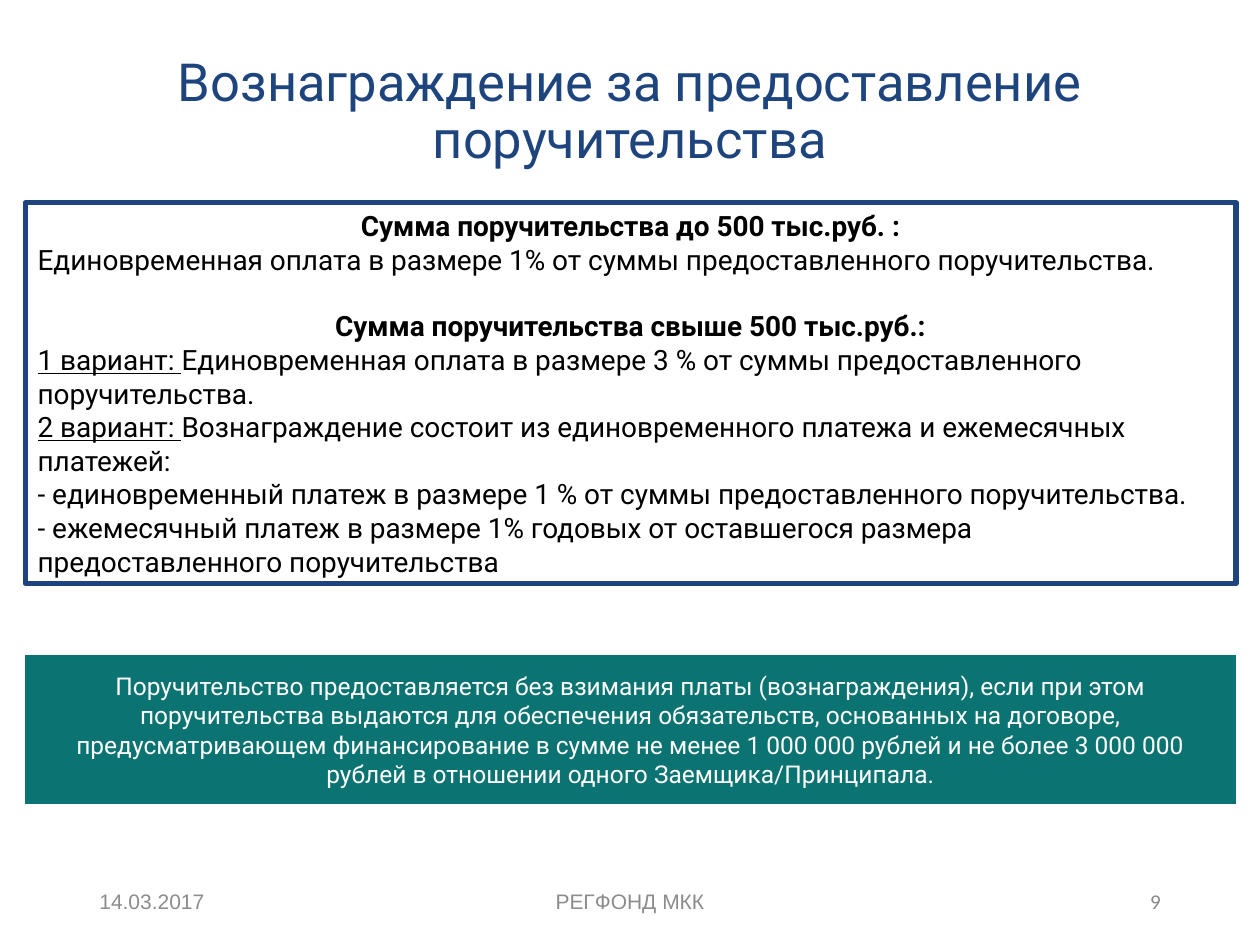
"""Build the slide on the fee for providing a guarantee."""
from dataclasses import dataclass
from typing import Optional

from pptx import Presentation
from pptx.dml.color import RGBColor
from pptx.enum.shapes import MSO_SHAPE
from pptx.enum.text import MSO_ANCHOR, PP_ALIGN
from pptx.util import Inches, Pt

COLORS = {
    "navy": "1E447E",
    "teal": "0B7371",
    "white": "FFFFFF",
    "black": "000000",
    "gray": "8C8C8C",
    "page": "898989",
}
LEFT, CENTER, RIGHT = PP_ALIGN.LEFT, PP_ALIGN.CENTER, PP_ALIGN.RIGHT


@dataclass
class Para:
    text: str
    lead: str = ""
    align: PP_ALIGN = LEFT
    bold: bool = False
    before: float = 0
    spacing: float = 1.0


@dataclass
class Block:
    left: float
    top: float
    width: float
    height: float
    paras: list[Para]
    size: float
    color: str
    font: str = "Roboto"
    fill: Optional[str] = None
    line: Optional[str] = None


def rgb(name: str) -> RGBColor:
    """Return the named colour."""
    return RGBColor.from_string(COLORS[name])


def add_para(p, para: Para, block: Block) -> None:
    """Write one paragraph, with its underlined lead if it has one."""
    p.alignment = para.align
    p.line_spacing = para.spacing
    p.space_before = Pt(para.before)
    p.font.name = block.font
    p.font.size = Pt(block.size)
    p.font.bold = para.bold
    p.font.color.rgb = rgb(block.color)
    if para.lead:
        r = p.add_run()
        r.text = para.lead
        r.font.underline = True
    p.add_run().text = para.text


def add_block(s, block: Block) -> None:
    """Draw a text box, or a rectangle if the block has a fill or line."""
    box = [Inches(v) for v in (block.left, block.top, block.width, block.height)]
    if block.fill or block.line:
        sp = s.shapes.add_shape(MSO_SHAPE.RECTANGLE, *box)
        sp.shadow.inherit = False
    else:
        sp = s.shapes.add_textbox(*box)
    if block.fill:
        sp.fill.solid()
        sp.fill.fore_color.rgb = rgb(block.fill)
    else:
        sp.fill.background()
    if block.line:
        sp.line.color.rgb = rgb(block.line)
        sp.line.width = Pt(3)
    else:
        sp.line.fill.background()
    tf = sp.text_frame
    tf.word_wrap = True
    tf.vertical_anchor = MSO_ANCHOR.MIDDLE
    for i, para in enumerate(block.paras):
        add_para(tf.add_paragraph() if i else tf.paragraphs[0], para, block)


TITLE = [Para("Вознаграждение за предоставление поручительства", align=CENTER, spacing=0.9)]
FEES = [
    Para("Сумма поручительства до 500 тыс.руб. :", align=CENTER, bold=True),
    Para("Единовременная оплата в размере 1% от суммы предоставленного поручительства."),
    Para("Сумма поручительства свыше 500 тыс.руб.:", align=CENTER, bold=True, before=19),
    Para("Единовременная оплата в размере 3 % от суммы предоставленного поручительства.",
         lead="1 вариант: "),
    Para("Вознаграждение состоит из единовременного платежа и ежемесячных платежей:",
         lead="2 вариант: "),
    Para("- единовременный платеж в размере 1 % от суммы предоставленного поручительства."),
    Para("- ежемесячный платеж в размере 1% годовых от оставшегося размера "
         "предоставленного поручительства"),
]
WAIVER = [Para(
    "Поручительство предоставляется без взимания платы (вознаграждения), если при этом "
    "поручительства выдаются для обеспечения обязательств, основанных на договоре, "
    "предусматривающем финансирование в сумме не менее 1 000 000 рублей и не более "
    "3 000 000 рублей в отношении одного Заемщика/Принципала.", align=CENTER)]

BLOCKS = [
    Block(0.47, 0.47, 9.06, 0.86, TITLE, 30, "navy"),
    Block(0.2, 5.2, 9.61, 1.18, WAIVER, 14, "white", fill="teal"),
    Block(0.69, 6.95, 2.25, 0.4, [Para("14.03.2017")], 12, "gray", "Arial"),
    Block(3.31, 6.95, 3.38, 0.4, [Para("РЕГФОНД МКК", align=CENTER)], 12, "gray", "Arial"),
    Block(7.06, 6.95, 2.25, 0.4, [Para("9", align=RIGHT)], 12, "page", "Calibri"),
    Block(0.2, 1.61, 9.61, 3.02, FEES, 16, "black", line="navy"),
]


def main() -> None:
    """Build and save the slide."""
    prs = Presentation()
    prs.slide_width, prs.slide_height = Inches(10), Inches(7.5)
    s = prs.slides.add_slide(prs.slide_layouts[6])
    for block in BLOCKS:
        add_block(s, block)
    prs.save("out.pptx")


if __name__ == "__main__":
    main()
